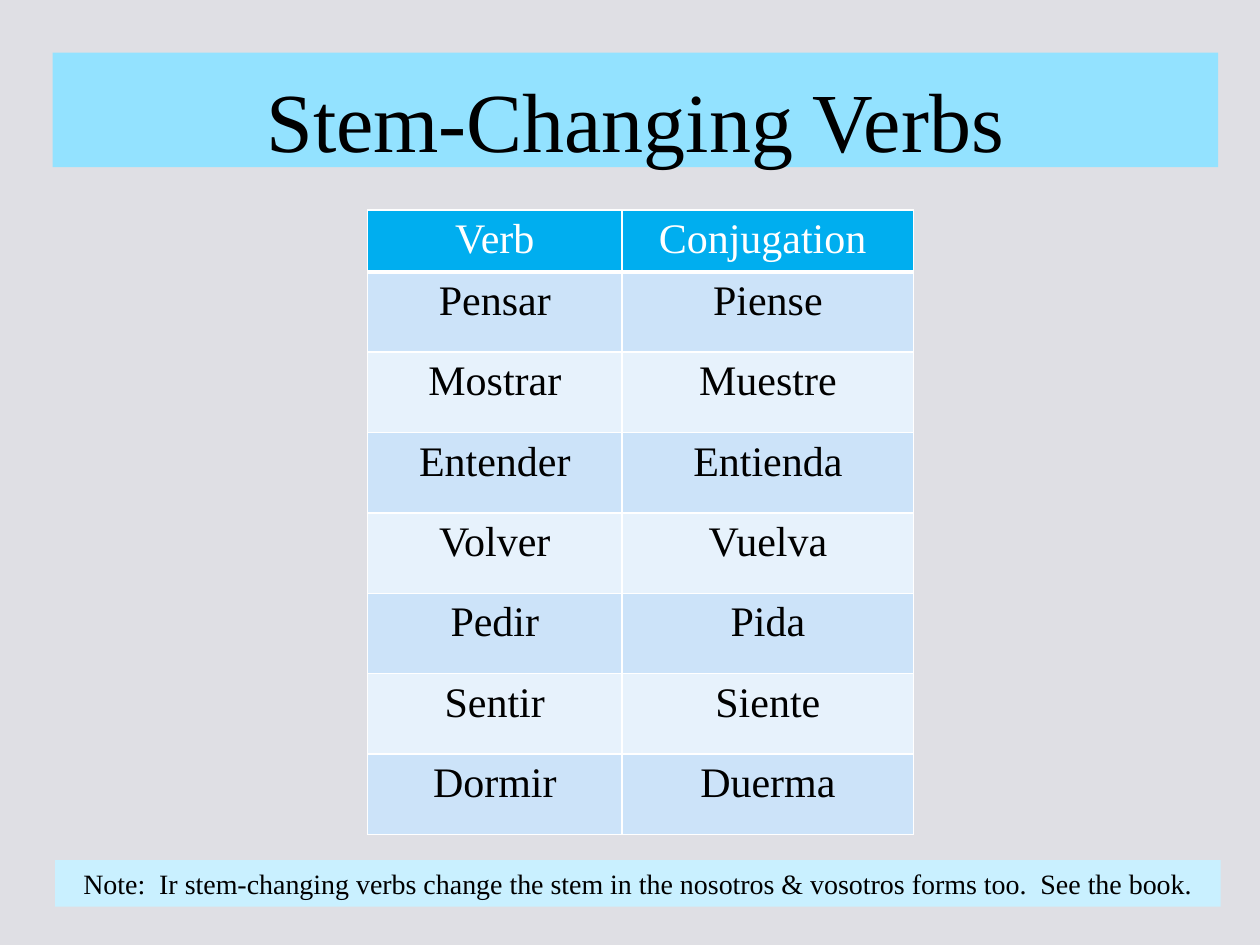
from lxml import etree
from pptx import Presentation
from pptx import util as u
from pptx.dml import color
from pptx.enum import shapes, text
from pptx.oxml import ns

FONT = "Times New Roman"
BLACK, WHITE = "000000", "FFFFFF"
BACKGROUND = "DFDFE4"
HEADER_FILL = "00AEEF"
BAND_FILLS = ("CCE3F9", "E7F2FC")

# words, size in points, fill, (left, top, width, height) and top inset in cm
BANNERS = [
    ("Stem-Changing Verbs", 48, "93E2FF", (1.06, 1.06, 23.5, 2.31), 0.32),
    ("Note:  Ir stem-changing verbs change the stem in the nosotros & vosotros "
     "forms too.  See the book.", 16, "C9F0FF", (1.11, 17.34, 23.5, 0.94), 0.13),
]
VERBS = [
    ("Verb", "Conjugation "),
    ("Pensar", "Piense"),
    ("Mostrar", "Muestre"),
    ("Entender", "Entienda"),
    ("Volver", "Vuelva"),
    ("Pedir", "Pida"),
    ("Sentir", "Siente"),
    ("Dormir", "Duerma"),
]
TABLE_LEFT, TABLE_TOP = 7.41, 4.23
COLUMN_WIDTHS = (5.13, 5.88)
HEADER_HEIGHT, VERB_HEIGHT = 1.25, 1.62


def paint(fill, hex_color):
    fill.solid()
    fill.fore_color.rgb = color.RGBColor.from_string(hex_color)


def write(frame, words, size, hex_color):
    paragraph = frame.paragraphs[0]
    paragraph.text = words
    paragraph.alignment = text.PP_ALIGN.CENTER
    paragraph.font.name = FONT
    paragraph.font.size = u.Pt(size)
    paragraph.font.color.rgb = color.RGBColor.from_string(hex_color)


def add_banner(slide, words, size, fill, box, top_inset):
    banner = slide.shapes.add_shape(
        shapes.MSO_SHAPE.RECTANGLE, *(u.Cm(length) for length in box))
    banner.shadow.inherit = False
    banner.line.fill.background()
    paint(banner.fill, fill)
    frame = banner.text_frame
    frame.word_wrap = True
    frame.vertical_anchor = text.MSO_ANCHOR.TOP
    frame.margin_top, frame.margin_bottom = u.Cm(top_inset), 0
    write(frame, words, size, BLACK)


def add_borders(cell, bottom_width):
    """Draw white lines round a cell; they must precede its fill in the XML."""
    widths = {"lnL": 1, "lnR": 1, "lnT": 1, "lnB": bottom_width}
    properties = cell._tc.get_or_add_tcPr()
    for place, (side, width) in enumerate(widths.items()):
        border = etree.Element(ns.qn(f"a:{side}"), w=str(u.Pt(width)))
        solid = etree.SubElement(border, ns.qn("a:solidFill"))
        etree.SubElement(solid, ns.qn("a:srgbClr"), val=WHITE)
        properties.insert(place, border)


def add_verb_table(slide):
    heights = [HEADER_HEIGHT] + [VERB_HEIGHT] * (len(VERBS) - 1)
    table = slide.shapes.add_table(
        len(VERBS), len(COLUMN_WIDTHS), u.Cm(TABLE_LEFT), u.Cm(TABLE_TOP),
        u.Cm(sum(COLUMN_WIDTHS)), u.Cm(sum(heights))).table
    for column, width in zip(table.columns, COLUMN_WIDTHS):
        column.width = u.Cm(width)
    for index, (row, height, forms) in enumerate(zip(table.rows, heights, VERBS)):
        row.height = u.Cm(height)
        is_header = index == 0
        for cell, form in zip(row.cells, forms):
            paint(cell.fill, HEADER_FILL if is_header else BAND_FILLS[(index - 1) % 2])
            add_borders(cell, 3 if is_header else 1)
            write(cell.text_frame, form, 24, WHITE if is_header else BLACK)


def main():
    deck = Presentation()
    deck.slide_width, deck.slide_height = u.Cm(25.4), u.Cm(19.05)
    slide = deck.slides.add_slide(deck.slide_layouts[6])
    paint(slide.background.fill, BACKGROUND)
    title, note = BANNERS
    add_banner(slide, *title)
    add_verb_table(slide)
    add_banner(slide, *note)
    deck.save("out.pptx")


if __name__ == "__main__":
    main()
